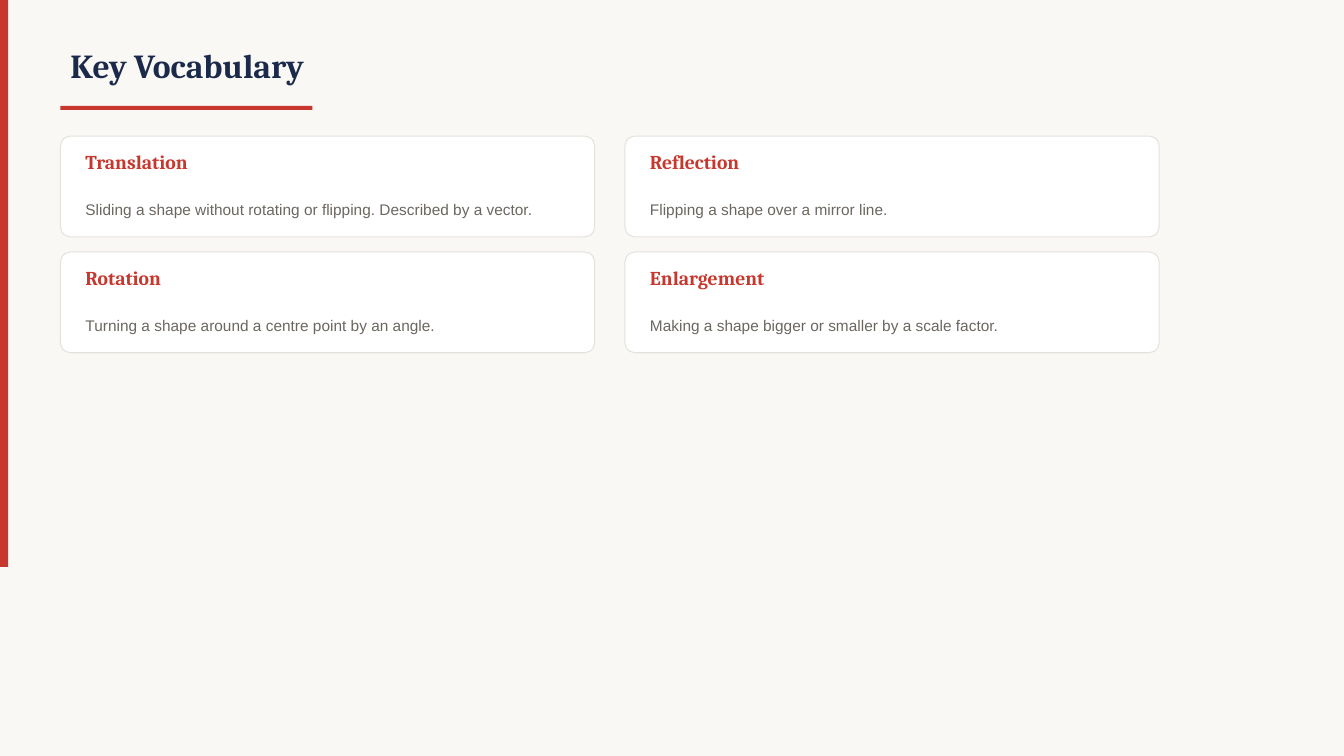
"""Build the Key Vocabulary slide with a two-column grid of definition cards."""
from pptx import Presentation
from pptx.dml.color import RGBColor
from pptx.enum.shapes import MSO_SHAPE as Shape
from pptx.enum.text import MSO_ANCHOR as Anchor
from pptx.util import Pt

TITLE = "Key Vocabulary"
TERMS = [
    ("Translation", "Sliding a shape without rotating or flipping. Described by a vector."),
    ("Reflection", "Flipping a shape over a mirror line."),
    ("Rotation", "Turning a shape around a centre point by an angle."),
    ("Enlargement", "Making a shape bigger or smaller by a scale factor."),
]

CREAM = RGBColor(0xFA, 0xF8, 0xF5)
RED = RGBColor(0xC8, 0x37, 0x2D)
NAVY = RGBColor(0x1B, 0x2A, 0x4A)
WHITE = RGBColor(0xFF, 0xFF, 0xFF)
BORDER = RGBColor(0xE5, 0xE2, 0xDC)
GREY = RGBColor(0x6B, 0x66, 0x60)

HEADING_FONT, BODY_FONT = "Cambria", "Arial"
COLUMNS = 2
MARGIN, GRID_TOP = 43.2, 97.2
CARD_WIDTH, CARD_HEIGHT = 381.6, 72
GAP_X, GAP_Y = 21.6, 10.8
INSET, TEXT_WIDTH = 10.8, 360


def add_panel(page, kind, left, top, width, height, fill, border=None):
    panel = page.shapes.add_shape(kind, Pt(left), Pt(top), Pt(width), Pt(height))
    panel.shadow.inherit = False
    panel.fill.solid()
    panel.fill.fore_color.rgb = fill
    if border is None:
        panel.line.fill.background()
    else:
        panel.line.color.rgb = border
        panel.line.width = Pt(0.75)
    return panel


def add_text(page, text, left, top, width, height, font, size, color, bold=False, spacing=None):
    box = page.shapes.add_textbox(Pt(left), Pt(top), Pt(width), Pt(height))
    frame = box.text_frame
    frame.word_wrap = True
    frame.vertical_anchor = Anchor.MIDDLE
    frame.text = text
    para = frame.paragraphs[0]
    if spacing:
        para.line_spacing = spacing
    span = para.runs[0]
    span.font.name = font
    span.font.size = Pt(size)
    span.font.bold = bold
    span.font.color.rgb = color


def add_card(page, index, term, meaning):
    row, column = divmod(index, COLUMNS)
    left = MARGIN + column * (CARD_WIDTH + GAP_X)
    top = GRID_TOP + row * (CARD_HEIGHT + GAP_Y)
    card = add_panel(page, Shape.ROUNDED_RECTANGLE, left, top, CARD_WIDTH, CARD_HEIGHT, WHITE, BORDER)
    card.adjustments[0] = 0.1
    add_text(page, term, left + INSET, top + 5.76, TEXT_WIDTH, 25.2, HEADING_FONT, 14, RED, bold=True)
    add_text(page, meaning, left + INSET, top + 32.4, TEXT_WIDTH, 36, BODY_FONT, 11, GREY, spacing=1.3)


def main():
    deck = Presentation()
    deck.slide_width, deck.slide_height = Pt(960), Pt(540)
    page = deck.slides.add_slide(deck.slide_layouts[6])
    page.background.fill.solid()
    page.background.fill.fore_color.rgb = CREAM

    add_panel(page, Shape.RECTANGLE, 0, 0, 5.76, 405, RED)
    add_text(page, TITLE, MARGIN, 21.6, 720, 50.4, HEADING_FONT, 24, NAVY, bold=True)
    add_panel(page, Shape.RECTANGLE, MARGIN, 75.6, 180, 2.88, RED)
    for index, (term, meaning) in enumerate(TERMS):
        add_card(page, index, term, meaning)

    deck.save("out.pptx")


if __name__ == "__main__":
    main()
